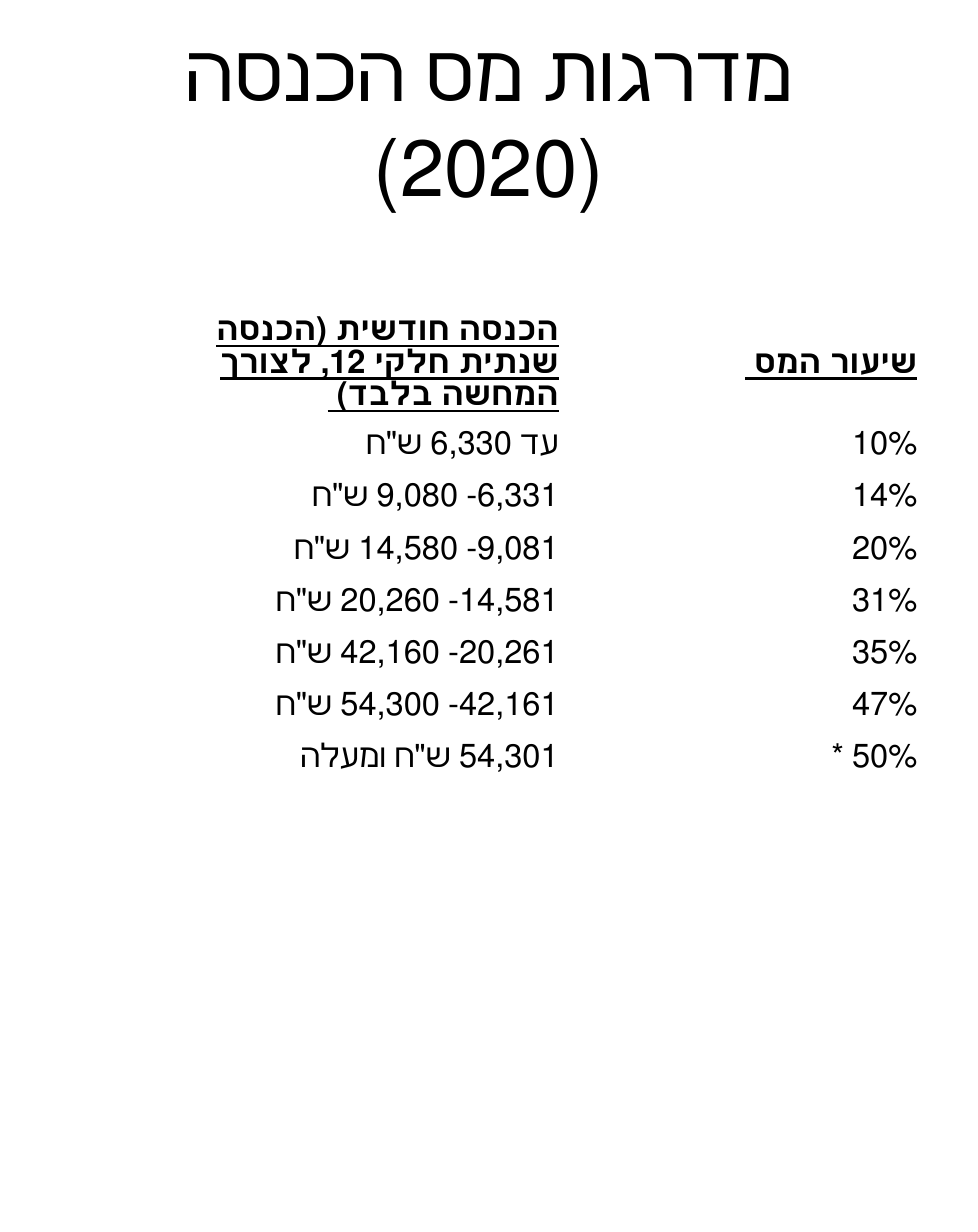
from dataclasses import dataclass

from pptx import Presentation
from pptx.dml.color import RGBColor
from pptx.enum.text import MSO_ANCHOR, PP_ALIGN
from pptx.util import Inches, Pt

CENTER, RIGHT = PP_ALIGN.CENTER, PP_ALIGN.RIGHT
MIDDLE = MSO_ANCHOR.MIDDLE
BLANK_LAYOUT = 6


@dataclass(frozen=True)
class Theme:
    font: str = "Calibri"
    ink: RGBColor = RGBColor(0, 0, 0)
    paper: RGBColor = RGBColor(255, 255, 255)
    title_size: int = 44
    table_size: int = 18


class TaxSlide:
    """Holds the theme and the slide; places parts by shares of the slide."""

    def __init__(self, deck, theme):
        self.theme = theme
        self.width, self.height = deck.slide_width, deck.slide_height
        self.slide = deck.slides.add_slide(deck.slide_layouts[BLANK_LAYOUT])
        background = self.slide.background.fill
        background.solid()
        background.fore_color.rgb = theme.paper

    def box(self, left, top, width, height):
        return (round(left * self.width), round(top * self.height),
                round(width * self.width), round(height * self.height))

    def set_text(self, frame, text, size, align, heading=False):
        """Fill a frame with one right-to-left paragraph."""
        paragraph = frame.paragraphs[0]
        paragraph.text = text
        paragraph.alignment = align
        paragraph._p.get_or_add_pPr().set("rtl", "1")
        if heading:
            paragraph.line_spacing = Pt(size)
        font = paragraph.font
        font.name, font.size = self.theme.font, Pt(size)
        font.bold = font.underline = heading
        font.color.rgb = self.theme.ink

    def title(self, text, left, top, width, height):
        frame = self.slide.shapes.add_textbox(
            *self.box(left, top, width, height)).text_frame
        frame.word_wrap = True
        frame.margin_left = frame.margin_right = Inches(0.3)
        frame.vertical_anchor = MIDDLE
        self.set_text(frame, text, self.theme.title_size, CENTER)

    def table(self, rows, left, top, column_shares, row_shares):
        table = self.slide.shapes.add_table(
            len(rows), len(column_shares),
            *self.box(left, top, sum(column_shares), sum(row_shares))).table
        table.first_row = table.horz_banding = False
        for column, share in zip(table.columns, column_shares):
            column.width = round(share * self.width)
        for row, share in zip(table.rows, row_shares):
            row.height = round(share * self.height)
        for row_number, texts in enumerate(rows):
            for column_number, text in enumerate(texts):
                cell = table.cell(row_number, column_number)
                cell.fill.background()
                cell.vertical_anchor = MIDDLE
                if text:
                    self.set_text(cell.text_frame, text, self.theme.table_size,
                                  RIGHT, heading=row_number == 0)


HEADINGS = ("הכנסה חודשית (הכנסה שנתית חלקי 12, לצורך המחשה בלבד) ",
            "שיעור המס ")
BRACKETS = [
    ('עד 6,330 ש"ח', "10%"),
    ('6,331- 9,080 ש"ח', "14%"),
    ('9,081- 14,580 ש"ח', "20%"),
    ('14,581- 20,260 ש"ח', "31%"),
    ('20,261- 42,160 ש"ח', "35%"),
    ('42,161- 54,300 ש"ח', "47%"),
    ('54,301 ש"ח ומעלה', "50% *"),
]


def main():
    deck = Presentation()
    deck.slide_width, deck.slide_height = Inches(7.5), Inches(9.45)
    page = TaxSlide(deck, Theme())
    margin = 0.05

    # Title
    page.title("מדרגות מס הכנסה (2020)", margin, 0.04, 1 - 2 * margin, 0.11)

    # Tax brackets, with an empty leading column
    rows = [("", income, rate) for income, rate in [HEADINGS, *BRACKETS]]
    heading_row, bracket_row = 0.84 / 9.45, 0.4 / 9.45
    page.table(rows, margin, 0.25,
               column_shares=[0.62 / 7.5, 3.39 / 7.5, 2.75 / 7.5],
               row_shares=[heading_row] + [bracket_row] * len(BRACKETS))

    deck.save("out.pptx")


if __name__ == "__main__":
    main()
